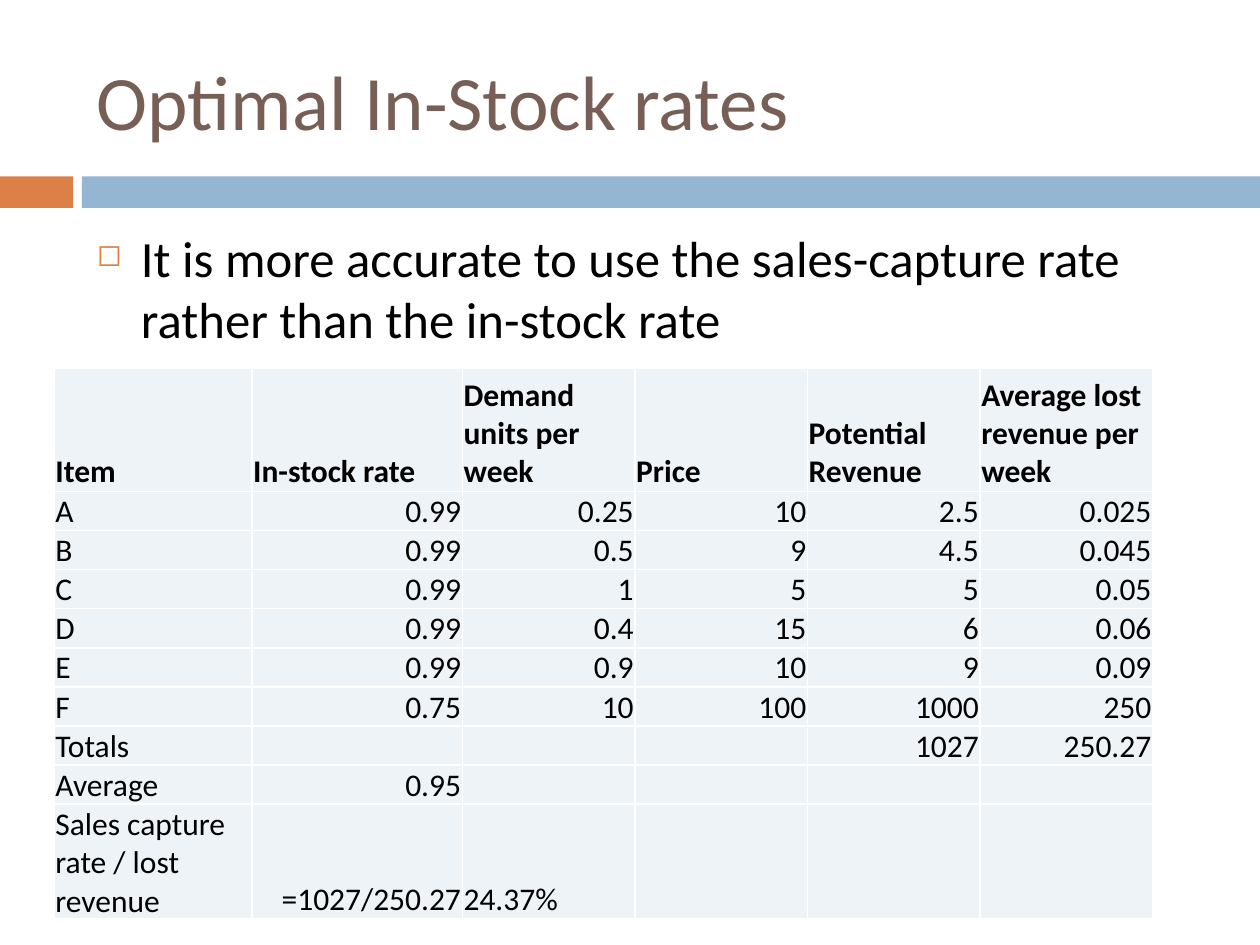
from dataclasses import dataclass

from lxml.etree import SubElement
from pptx import Presentation
from pptx.dml.color import RGBColor as Rgb
from pptx.enum.shapes import MSO_SHAPE as Shape
from pptx.enum.text import MSO_ANCHOR as Anchor, PP_ALIGN as Align
from pptx.oxml.ns import qn
from pptx.util import Inches, Pt


@dataclass(frozen=True)
class Theme:
    font: str = "Calibri"
    heading: str = "775F55"
    ink: str = "000000"
    accent: str = "DD8047"
    band: str = "94B6D2"
    cell: str = "EEF3F7"
    border: str = "FFFFFF"
    title_size: int = 44
    body_size: int = 29
    table_size: int = 18


class SlideBuilder:
    """Draws themed elements on one slide."""

    def __init__(self, slide, theme):
        self.slide = slide
        self.theme = theme

    def add_run(self, paragraph, text, size, color, bold=False):
        run = paragraph.add_run()
        run.text = text
        run.font.name = self.theme.font
        run.font.size = Pt(size)
        run.font.bold = bold
        run.font.color.rgb = Rgb.from_string(color)

    def bar(self, left, top, width, height, color):
        bar = self.slide.shapes.add_shape(
            Shape.RECTANGLE, Inches(left), Inches(top), Inches(width), Inches(height))
        bar.shadow.inherit = False
        bar.fill.solid()
        bar.fill.fore_color.rgb = Rgb.from_string(color)
        bar.line.fill.background()

    def text(self, left, top, width, height, wording, size, color, anchor=Anchor.TOP):
        frame = self.slide.shapes.add_textbox(
            Inches(left), Inches(top), Inches(width), Inches(height)).text_frame
        frame.word_wrap = True
        frame.vertical_anchor = anchor
        paragraph = frame.paragraphs[0]
        self.add_run(paragraph, wording, size, color)
        return paragraph

    def bullet(self, left, top, width, height, wording):
        paragraph = self.text(left, top, width, height, wording,
                              self.theme.body_size, self.theme.ink)
        paragraph.space_before = Pt(7)
        props = paragraph._p.get_or_add_pPr()
        props.set("marL", str(Inches(0.35)))
        props.set("indent", str(-Inches(0.35)))
        color = SubElement(props, qn("a:buClr"))
        SubElement(color, qn("a:srgbClr"), val=self.theme.accent)
        SubElement(props, qn("a:buSzPct"), val="60000")
        SubElement(props, qn("a:buChar"), char="◻")

    def cell(self, cell, wording, align, bold):
        cell.margin_left = cell.margin_right = cell.margin_top = Inches(0.01)
        cell.margin_bottom = 0
        cell.vertical_anchor = Anchor.BOTTOM
        props = cell._tc.get_or_add_tcPr()
        for side in ("lnL", "lnR", "lnT", "lnB"):
            edge = SubElement(props, qn(f"a:{side}"), w=str(Pt(1)))
            fill = SubElement(edge, qn("a:solidFill"))
            SubElement(fill, qn("a:srgbClr"), val=self.theme.border)
        cell.fill.solid()
        cell.fill.fore_color.rgb = Rgb.from_string(self.theme.cell)
        if wording:
            paragraph = cell.text_frame.paragraphs[0]
            paragraph.alignment = align
            self.add_run(paragraph, wording, self.theme.table_size, self.theme.ink, bold)

    def table(self, left, top, widths, heights, rows):
        table = self.slide.shapes.add_table(
            len(rows), len(widths), Inches(left), Inches(top),
            Inches(sum(widths)), Inches(sum(heights))).table
        table.first_row = table.horz_banding = False
        for column, width in zip(table.columns, widths):
            column.width = Inches(width)
        for row, height in zip(table.rows, heights):
            row.height = Inches(height)
        for r, row in enumerate(rows):
            for c, wording in enumerate(row):
                is_label = r == 0 or c == 0 or wording.endswith("%")
                self.cell(table.cell(r, c), wording,
                          Align.LEFT if is_label else Align.RIGHT, bold=r == 0)


STOCK_ROWS = [
    ("Item", "In-stock rate", "Demand units per week", "Price",
     "Potential Revenue", "Average lost revenue per week"),
    ("A", "0.99", "0.25", "10", "2.5", "0.025"),
    ("B", "0.99", "0.5", "9", "4.5", "0.045"),
    ("C", "0.99", "1", "5", "5", "0.05"),
    ("D", "0.99", "0.4", "15", "6", "0.06"),
    ("E", "0.99", "0.9", "10", "9", "0.09"),
    ("F", "0.75", "10", "100", "1000", "250"),
    ("Totals", "", "", "", "1027", "250.27"),
    ("Average", "0.95", "", "", "", ""),
    ("Sales capture rate / lost revenue", "=1027/250.27", "24.37%", "", "", ""),
]


def main():
    deck = Presentation()
    deck.slide_width, deck.slide_height = Inches(10), Inches(7.5)
    theme = Theme()
    builder = SlideBuilder(deck.slides.add_slide(deck.slide_layouts[6]), theme)
    builder.bar(0, 1.4, 0.58, 0.25, theme.accent)
    builder.bar(0.65, 1.4, 9.35, 0.25, theme.band)
    builder.text(0.67, 0.25, 8.92, 1.08, "Optimal In-Stock rates",
                 theme.title_size, theme.heading, Anchor.MIDDLE)
    builder.table(0.43, 2.92, [1.57, 1.67] + [1.37] * 4,
                  [0.98] + [0.26] * (len(STOCK_ROWS) - 1), STOCK_ROWS)
    builder.bullet(0.67, 1.75, 8.92, 5.31,
                   "It is more accurate to use the sales-capture rate "
                   "rather than the in-stock rate")
    deck.save("out.pptx")


if __name__ == "__main__":
    main()
